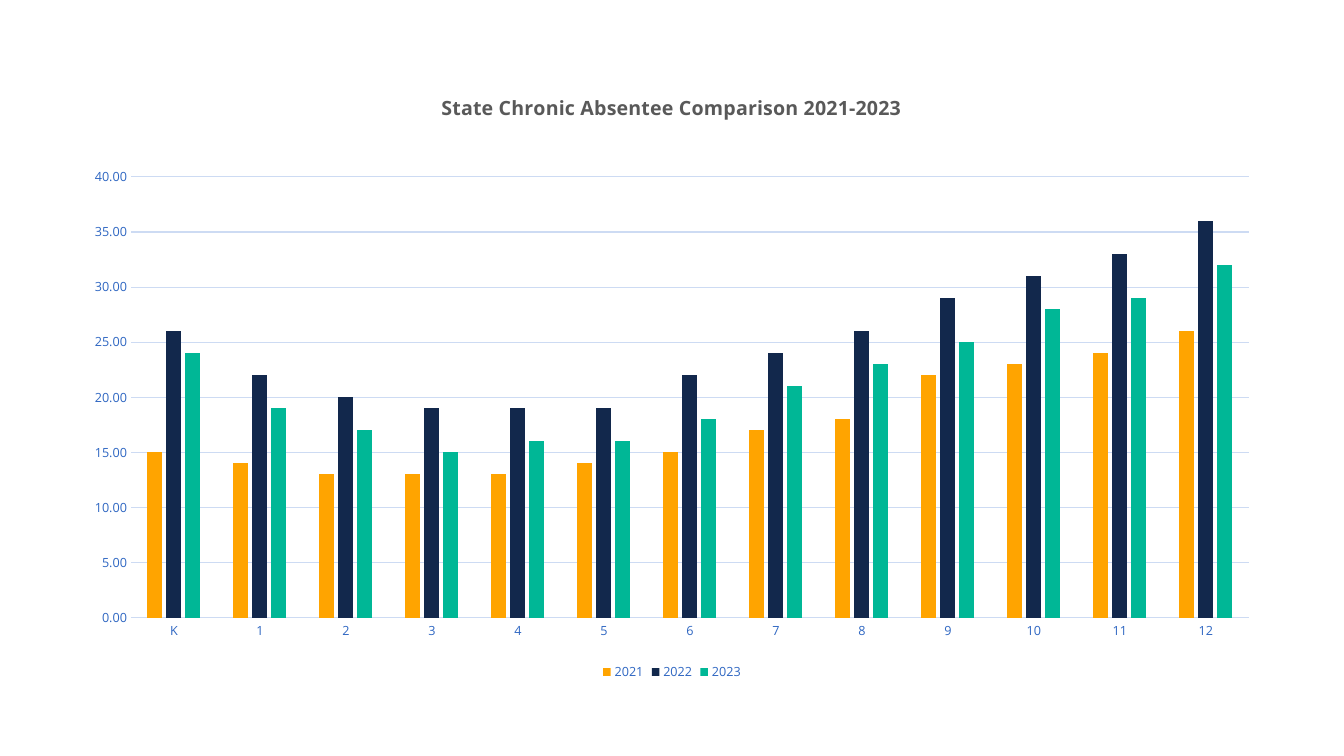
from lxml import etree
from pptx import Presentation
from pptx.chart.data import CategoryChartData
from pptx.dml.color import RGBColor
from pptx.enum.chart import XL_CHART_TYPE, XL_LEGEND_POSITION, XL_TICK_MARK
from pptx.oxml.ns import qn
from pptx.util import Emu, Pt

COLUMNS = XL_CHART_TYPE.COLUMN_CLUSTERED
BOTTOM = XL_LEGEND_POSITION.BOTTOM
NO_TICK = XL_TICK_MARK.NONE
PX = 914400 / 100.8
FONT = "Open Sans"
COLORS = {"navy": "12284C", "blue": "2E66C2", "pale": "CDDBF3",
          "gray": "595959", "gold": "FFA400", "green": "00B796"}
TITLE = "State Chronic Absentee Comparison 2021-2023"
GRADES = ["K"] + [str(grade) for grade in range(1, 13)]
FRAME = (71, 71, 1202, 614)
RATES = [
    ("2021", "gold", (15, 14, 13, 13, 13, 14, 15, 17, 18, 22, 23, 24, 26)),
    ("2022", "navy", (26, 22, 20, 19, 19, 19, 22, 24, 26, 29, 31, 33, 36)),
    ("2023", "green", (24, 19, 17, 15, 16, 16, 18, 21, 23, 25, 28, 29, 32)),
]


class Deck:
    """Holds the style and the current slide."""

    def __init__(self, wide, high):
        self.prs = Presentation()
        self.prs.slide_width = self.emu(wide)
        self.prs.slide_height = self.emu(high)
        self.slide = self.prs.slides.add_slide(self.prs.slide_layouts[6])

    def emu(self, px):
        return Emu(round(px * PX))

    def color(self, name):
        return RGBColor.from_string(COLORS[name])

    def font(self, font, size, color, bold=False):
        font.name = FONT
        font.size = Pt(size)
        font.bold = bold
        font.color.rgb = self.color(color)

    def line(self, line):
        line.color.rgb = self.color("pale")
        line.width = Pt(0.75)

    def place(self, part, **spots):
        layout = part.find(qn("c:layout"))
        if layout is None:
            layout = etree.Element(qn("c:layout"))
            part.insert(0, layout)
        manual = etree.SubElement(layout, qn("c:manualLayout"))
        if "w" in spots:
            etree.SubElement(manual, qn("c:layoutTarget")).set("val", "inner")
        for key in ("x", "y"):
            etree.SubElement(manual, qn(f"c:{key}Mode")).set("val", "edge")
        for key, px in spots.items():
            full = FRAME[2] if key in "xw" else FRAME[3]
            etree.SubElement(manual, qn(f"c:{key}")).set("val", f"{px / full:.4f}")

    def chart(self, frame, groups, rates):
        data = CategoryChartData(number_format="0.00")
        data.categories = groups
        for name, _, values in rates:
            data.add_series(name, values)
        box = map(self.emu, frame)
        chart = self.slide.shapes.add_chart(COLUMNS, *box, data).chart
        self.font(chart.font, 10, "navy")
        plot = chart.plots[0]
        plot.gap_width = 219
        plot.overlap = -27
        plot.vary_by_categories = False
        for series, (_, color, _) in zip(plot.series, rates):
            series.format.fill.solid()
            series.format.fill.fore_color.rgb = self.color(color)
        self.place(chart.element.find(".//" + qn("c:plotArea")),
                   x=60, y=106, w=1118, h=441)
        self.axes(chart)
        self.legend(chart)
        return chart

    def axes(self, chart):
        for axis in (chart.category_axis, chart.value_axis):
            axis.major_tick_mark = axis.minor_tick_mark = NO_TICK
            self.font(axis.tick_labels.font, 9, "blue")
        self.line(chart.category_axis.format.line)
        axis = chart.value_axis
        axis.minimum_scale, axis.maximum_scale, axis.major_unit = 0, 40, 5
        axis.tick_labels.number_format = "0.00"
        axis.tick_labels.number_format_is_linked = False
        axis.format.line.fill.background()
        self.line(axis.major_gridlines.format.line)

    def legend(self, chart):
        chart.has_legend = True
        chart.legend.position = BOTTOM
        chart.legend.include_in_layout = False
        self.font(chart.legend.font, 9, "blue")

    def title(self, chart, text):
        chart.has_title = True
        frame = chart.chart_title.text_frame
        frame.text = text
        self.font(frame.paragraphs[0].runs[0].font, 14, "gray", True)
        self.place(chart.element.find(".//" + qn("c:title")), x=367, y=18)


def main():
    deck = Deck(1344, 756)
    chart = deck.chart(FRAME, GRADES, RATES)
    deck.title(chart, TITLE)
    deck.prs.save("out.pptx")


if __name__ == "__main__":
    main()
